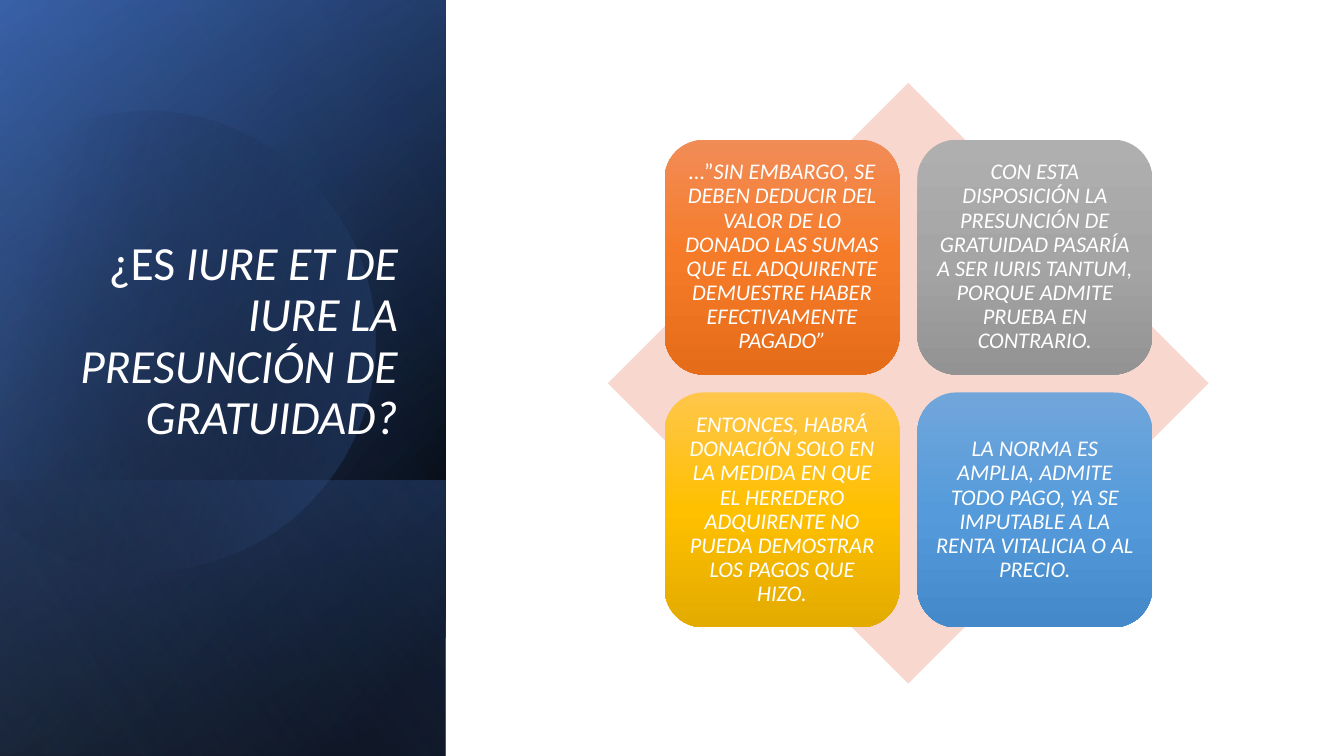
"""Builds the slide on the presumption of gratuity."""
from dataclasses import dataclass

from lxml.etree import SubElement
from pptx import Presentation
from pptx.dml.color import RGBColor
from pptx.enum.shapes import MSO_SHAPE as Shape
from pptx.enum.text import MSO_ANCHOR as Anchor, MSO_AUTO_SIZE as AutoSize, PP_ALIGN as Align
from pptx.oxml.ns import qn
from pptx.util import Cm, Pt


@dataclass(frozen=True)
class Theme:
    font: str = "Calibri"
    title_size: int = 34
    card_size: int = 16
    text: str = "FFFFFF"
    diamond: str = "F8D7CE"
    base: tuple = ((8, "000000", 100), (100, "2F5597", 100))
    glow: tuple = ((0, "000000", 0), (99, "4472C4", 46))
    footer: tuple = ((2, "4472C4", 29), (100, "000000", 30))
    disc: tuple = ((29, "000000", 0), (100, "4472C4", 43))
    veil: tuple = ((0, "000000", 0), (99, "8FAADC", 11))
    orange: tuple = ((0, "F18C57", 100), (50, "F67B28", 100), (100, "E56C19", 100))
    grey: tuple = ((0, "AFAFAF", 100), (50, "A5A5A5", 100), (100, "939393", 100))
    gold: tuple = ((0, "FFC64B", 100), (50, "FFC000", 100), (100, "E3AB00", 100))
    blue: tuple = ((0, "71A6DB", 100), (50, "559BDB", 100), (100, "448ACA", 100))


THEME = Theme()
SLIDE_WIDTH, SLIDE_HEIGHT = 33.87, 19.05
PANEL_WIDTH, FOOTER_HEIGHT = 11.23, 6.95
CARD_LEFT, CARD_TOP, CARD_SIDE, CARD_PITCH = 16.75, 3.52, 5.92, 6.37

TITLE = (("¿ES ", False), ("IURE ET DE IURE LA PRESUNCIÓN DE GRATUIDAD?", True))
CARDS = (
    (THEME.orange, (("…”", False), (
        "SIN EMBARGO, SE DEBEN DEDUCIR DEL VALOR DE LO DONADO LAS SUMAS "
        "QUE EL ADQUIRENTE DEMUESTRE HABER EFECTIVAMENTE PAGADO”", True))),
    (THEME.grey, ((
        "CON ESTA DISPOSICIÓN LA PRESUNCIÓN DE GRATUIDAD PASARÍA A SER "
        "IURIS TANTUM, PORQUE ADMITE PRUEBA EN CONTRARIO.", True),)),
    (THEME.gold, ((
        "ENTONCES, HABRÁ DONACIÓN SOLO EN LA MEDIDA EN QUE EL HEREDERO "
        "ADQUIRENTE NO PUEDA DEMOSTRAR LOS PAGOS QUE HIZO.", True),)),
    (THEME.blue, ((
        "LA NORMA ES AMPLIA, ADMITE TODO PAGO, YA SE IMPUTABLE A LA RENTA "
        "VITALICIA O AL PRECIO.", True),)),
)

DISC_LEFT, DISC_TOP, DISC_TURN = -1.4, 2.69, 343.9
DISC_START = (6.78, 0.25)
DISC_SEGMENTS = (
    ((9.12, 0.99), (10.85, 3.2), (10.85, 5.79)),
    ((10.85, 9.02), (8.23, 11.61), (5.03, 11.61)),
    ((3.02, 11.61), (1.24, 10.59), (0.23, 9.04)),
    ((0, 8.69),),
    ((2.31, 0.69),),
    ((2.77, 0.46),),
    ((3.48, 0.15), (4.24, 0), (5.03, 0)),
    ((5.64, 0), (6.22, 0.1), DISC_START),
)


def finish(shape):
    """Remove the outline and the shadow."""
    shape.line.fill.background()
    shape.shadow.inherit = False
    return shape


def fill_gradient(shape, stops, angle):
    """Fill a shape with a linear gradient of (position, colour, opacity) stops."""
    shape.fill.background()
    blank = shape.element.spPr.find(qn("a:noFill"))
    gradient = blank.makeelement(qn("a:gradFill"), {"rotWithShape": "1"})
    blank.getparent().replace(blank, gradient)
    stop_list = SubElement(gradient, qn("a:gsLst"))
    for position, colour, opacity in stops:
        stop = SubElement(stop_list, qn("a:gs"), pos=str(position * 1000))
        tint = SubElement(stop, qn("a:srgbClr"), val=colour)
        if opacity < 100:
            SubElement(tint, qn("a:alpha"), val=str(opacity * 1000))
    SubElement(gradient, qn("a:lin"), ang=str(angle * 60000), scaled="0")


def write_text(frame, parts, size, align):
    """Write one paragraph of (text, italic) parts."""
    paragraph = frame.paragraphs[0]
    paragraph.alignment = align
    paragraph.line_spacing = 0.9
    for words, italic in parts:
        run = paragraph.add_run()
        run.text = words
        run.font.name = THEME.font
        run.font.size = Pt(size)
        run.font.italic = italic
        run.font.color.rgb = RGBColor.from_string(THEME.text)


def add_layer(slide, height, stops, angle):
    """Add a mirrored quarter-turned layer to the bottom of the left panel."""
    left = (PANEL_WIDTH - height) / 2
    top = SLIDE_HEIGHT - (height + PANEL_WIDTH) / 2
    layer = finish(slide.shapes.add_shape(
        Shape.RECTANGLE, Cm(left), Cm(top), Cm(height), Cm(PANEL_WIDTH)))
    layer.rotation = 90
    layer.element.spPr.find(qn("a:xfrm")).set("flipH", "1")
    fill_gradient(layer, stops, angle)


def add_disc(slide):
    """Add the translucent disc with its cut side and curved edges."""
    builder = slide.shapes.build_freeform(*map(Cm, DISC_START))
    builder.add_line_segments(
        [tuple(map(Cm, segment[-1])) for segment in DISC_SEGMENTS], close=True)
    disc = finish(builder.convert_to_shape(Cm(DISC_LEFT), Cm(DISC_TOP)))
    edges = list(disc.element.iter(qn("a:lnTo")))
    for edge, segment in zip(edges, DISC_SEGMENTS):
        if len(segment) == 3:
            curve = edge.makeelement(qn("a:cubicBezTo"))
            for x, y in segment:
                SubElement(curve, qn("a:pt"), x=str(Cm(x)), y=str(Cm(y)))
            edge.getparent().replace(edge, curve)
    disc.rotation = DISC_TURN
    fill_gradient(disc, THEME.disc, 30)


def place_title(slide):
    """Move the title over the panel and write it."""
    title = slide.shapes.title
    title.element.getparent().append(title.element)
    title.left, title.top, title.width, title.height = Cm(1.62), Cm(4.68), Cm(8.66), Cm(6.66)
    frame = title.text_frame
    frame.word_wrap = True
    frame.auto_size = AutoSize.NONE
    frame.vertical_anchor = Anchor.BOTTOM
    write_text(frame, TITLE, THEME.title_size, Align.RIGHT)


def add_diamond(slide):
    """Add the diamond behind the cards."""
    diamond = finish(slide.shapes.add_shape(
        Shape.DIAMOND, Cm(15.32), Cm(2.09), Cm(15.14), Cm(15.14)))
    diamond.fill.solid()
    diamond.fill.fore_color.rgb = RGBColor.from_string(THEME.diamond)


def add_card(slide, index, stops, parts):
    """Add a rounded card at its place in the two-by-two grid."""
    row, column = divmod(index, 2)
    card = finish(slide.shapes.add_shape(
        Shape.ROUNDED_RECTANGLE, Cm(CARD_LEFT + column * CARD_PITCH),
        Cm(CARD_TOP + row * CARD_PITCH), Cm(CARD_SIDE), Cm(CARD_SIDE)))
    fill_gradient(card, stops, 90)
    frame = card.text_frame
    frame.word_wrap = True
    frame.vertical_anchor = Anchor.MIDDLE
    frame.margin_left = frame.margin_right = Cm(0.17)
    frame.margin_top = frame.margin_bottom = Cm(0.17)
    write_text(frame, parts, THEME.card_size, Align.CENTER)


def main():
    """Build and save the slide."""
    deck = Presentation()
    deck.slide_width, deck.slide_height = Cm(SLIDE_WIDTH), Cm(SLIDE_HEIGHT)
    slide = deck.slides.add_slide(deck.slide_layouts.get_by_name("Title Only"))
    add_layer(slide, SLIDE_HEIGHT, THEME.base, 50)
    add_layer(slide, SLIDE_HEIGHT, THEME.glow, 30)
    add_layer(slide, FOOTER_HEIGHT, THEME.footer, 130)
    add_disc(slide)
    add_layer(slide, SLIDE_HEIGHT, THEME.veil, 120)
    place_title(slide)
    add_diamond(slide)
    for index, (stops, parts) in enumerate(CARDS):
        add_card(slide, index, stops, parts)
    deck.save("out.pptx")


if __name__ == "__main__":
    main()
